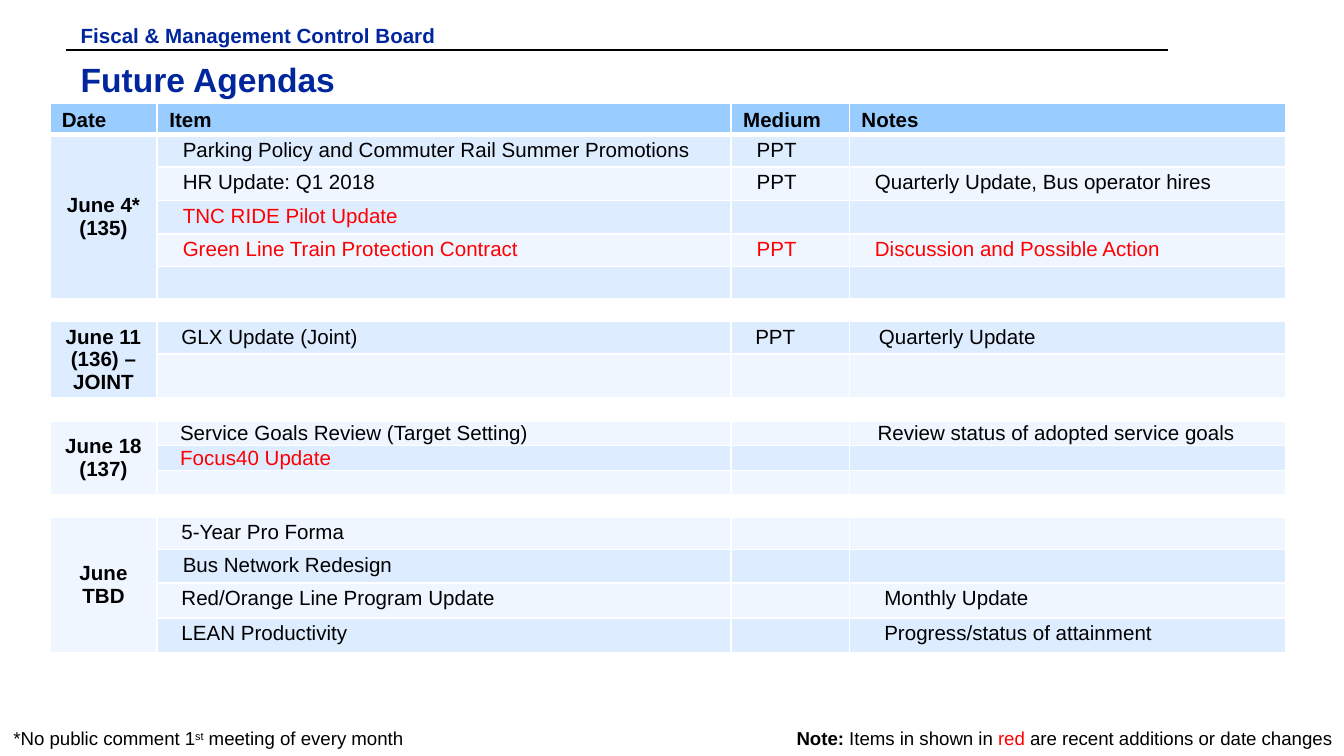
from lxml import etree
from pptx import Presentation
from pptx.dml.color import RGBColor
from pptx.enum.shapes import MSO_CONNECTOR
from pptx.enum.text import MSO_ANCHOR, PP_ALIGN
from pptx.oxml import parse_xml
from pptx.oxml.ns import nsdecls, qn
from pptx.util import Inches, Pt

TOP, MIDDLE = MSO_ANCHOR.TOP, MSO_ANCHOR.MIDDLE
LEFT, CENTER, RIGHT = PP_ALIGN.LEFT, PP_ALIGN.CENTER, PP_ALIGN.RIGHT
STRAIGHT = MSO_CONNECTOR.STRAIGHT
COLORS = {
    "navy": "00269E", "black": "000000", "red": "FF0000", "white": "FFFFFF",
    "header": "99CCFF", "dark": "DEECFF", "light": "EFF6FF",
}


def write(paragraph, text, size=11, color="black", bold=False, align=LEFT, raised=False):
    """Append formatted text to a paragraph, with a line break at each newline."""
    paragraph.alignment = align
    for index, line in enumerate(text.split("\n")):
        if index:
            paragraph.add_line_break()
        run = paragraph.add_run()
        run.text = line
        run.font.name = "Arial"
        run.font.size = Pt(size)
        run.font.bold = bold
        run.font.color.rgb = RGBColor.from_string(COLORS[color])
        if raised:
            run._r.get_or_add_rPr().set("baseline", "30000")


def style_cell(cell, fill=None, bottom=1, left=0.09, anchor=TOP, pad=0.03):
    """Set the fill, white borders, margins and anchor of a cell."""
    cell.margin_left, cell.margin_right = Inches(left), Inches(0.09)
    cell.margin_top, cell.margin_bottom = Inches(pad), Inches(pad * 2 / 3)
    cell.vertical_anchor = anchor
    properties = cell._tc.get_or_add_tcPr()
    for side, width in (("L", 1), ("R", 1), ("T", 1), ("B", bottom)):
        properties.append(parse_xml(
            f'<a:ln{side} {nsdecls("a")} w="{Pt(width)}"><a:solidFill>'
            f'<a:srgbClr val="{COLORS["white"]}"/></a:solidFill></a:ln{side}>'))
    if fill:
        cell.fill.solid()
        cell.fill.fore_color.rgb = RGBColor.from_string(COLORS[fill])
    else:
        cell.fill.background()


# Widescreen slide, 16:9
prs = Presentation()
prs.slide_width, prs.slide_height = Inches(10), Inches(10 * 9 / 16)
slide = prs.slides.add_slide(prs.slide_layouts[5])

# Heading and rule
rule = slide.shapes.add_connector(STRAIGHT, Inches(0.49), Inches(0.37), Inches(8.69), Inches(0.37))
rule.line.color.rgb = RGBColor.from_string(COLORS["black"])
rule.line.width = Pt(1)
etree.SubElement(rule._element.spPr, qn("a:effectLst"))

title = slide.shapes.title
title.left, title.top, title.width, title.height = Inches(0.51), Inches(0.4), Inches(8.36), Inches(0.48)
title.text_frame.vertical_anchor = TOP
title.text_frame.margin_left, title.text_frame.margin_top = Inches(0.09), Inches(0.04)
write(title.text_frame.paragraphs[0], "Future Agendas", size=18, color="navy", bold=True)

board = slide.shapes.add_textbox(Inches(0.51), Inches(0.13), Inches(3.41), Inches(0.19))
board.text_frame.word_wrap = True
board.text_frame.margin_left, board.text_frame.margin_top = Inches(0.09), Inches(0.04)
write(board.text_frame.paragraphs[0], "Fiscal & Management Control Board", color="navy", bold=True)

# Meetings: date paragraphs, first band, padding, then (row height, color, cells),
# each cell being its column, text and left inset
meetings = [
    (["June 4*", "(135)"], 0, 0.03, [
        (0.24, "black", [(1, "Parking Policy and Commuter Rail Summer Promotions", 0.19), (2, "PPT", 0.19)]),
        (0.25, "black", [(1, "HR Update: Q1 2018", 0.19), (2, "PPT", 0.19),
                         (3, "Quarterly Update, Bus operator hires", 0.19)]),
        (0.25, "red", [(1, "TNC RIDE Pilot Update", 0.19)]),
        (0.24, "red", [(1, "Green Line Train Protection Contract", 0.19), (2, "PPT", 0.19),
                       (3, "Discussion and Possible Action", 0.19)]),
        (0.24, "black", []),
    ]),
    (["June 11 (136) – JOINT"], 0, 0.03, [
        (0.24, "black", [(1, "GLX Update (Joint)", 0.18), (2, "PPT", 0.18), (3, "Quarterly Update", 0.22)]),
        (0.33, "black", []),
    ]),
    (["June 18", "(137)"], 1, 0, [
        (0.18, "black", [(1, "Service Goals Review (Target Setting)", 0.17),
                         (3, "Review status of adopted service goals", 0.21)]),
        (0.18, "red", [(1, "Focus40 Update", 0.17)]),
        (0.18, "black", []),
    ]),
    (["June\nTBD"], 1, 0.03, [
        (0.24, "black", [(1, "5-Year Pro Forma", 0.18)]),
        (0.25, "black", [(1, "Bus Network Redesign", 0.19)]),
        (0.26, "black", [(1, "Red/Orange Line Program Update", 0.18), (3, "Monthly Update", 0.26)]),
        (0.26, "black", [(1, "LEAN Productivity", 0.18), (3, "Progress/status of attainment", 0.26)]),
    ]),
]
HEADER_HEIGHT, GAP_HEIGHT = 0.23, 0.17
column_widths = [0.8, 4.27, 0.88, 3.25]
row_count = sum(len(items) for *_, items in meetings) + len(meetings)

# Agenda table
agenda = slide.shapes.add_table(
    row_count, 4, Inches(0.37), Inches(0.77), Inches(9.2), Inches(4.19)).table
for column, width in zip(agenda.columns, column_widths):
    column.width = Inches(width)

agenda.rows[0].height = Inches(HEADER_HEIGHT)
for column, heading in enumerate(["Date", "Item", "Medium", "Notes"]):
    cell = agenda.cell(0, column)
    style_cell(cell, "header", bottom=3, anchor=MIDDLE)
    write(cell.text_frame.paragraphs[0], heading, bold=True)

row = 1
for number, (date_lines, first_band, pad, items) in enumerate(meetings):
    # Unfilled row between meetings
    if number:
        agenda.rows[row].height = Inches(GAP_HEIGHT)
        for column in range(4):
            style_cell(agenda.cell(row, column), pad=0)
        row += 1

    # Merged date cell
    date = agenda.cell(row, 0)
    date.merge(agenda.cell(row + len(items) - 1, 0))
    style_cell(date, ("dark", "light")[first_band], anchor=MIDDLE, pad=0)
    for index, line in enumerate(date_lines):
        paragraph = date.text_frame.add_paragraph() if index else date.text_frame.paragraphs[0]
        write(paragraph, line, bold=True, align=CENTER)

    # Banded item rows
    for index, (height, color, entries) in enumerate(items):
        agenda.rows[row].height = Inches(height)
        band = ("dark", "light")[(first_band + index) % 2]
        texts = {column: (text, inset) for column, text, inset in entries}
        for column in range(1, 4):
            text, inset = texts.get(column, ("", 0.09))
            cell = agenda.cell(row, column)
            style_cell(cell, band, left=inset, pad=pad if text else 0, anchor=TOP if pad else MIDDLE)
            if text:
                write(cell.text_frame.paragraphs[0], text, color=color)
        row += 1

# Small type in empty cells keeps their rows at the set height
for cell in agenda.iter_cells():
    if not cell.text:
        end = etree.SubElement(cell.text_frame.paragraphs[0]._p, qn("a:endParaRPr"))
        end.set("sz", "800")

# Footnotes
comment = slide.shapes.add_textbox(Inches(0.01), Inches(5.37), Inches(4.16), Inches(0.26))
change = slide.shapes.add_textbox(Inches(5.8), Inches(5.37), Inches(4.2), Inches(0.26))
for footnote in (comment, change):
    frame = footnote.text_frame
    frame.word_wrap = footnote is comment
    frame.margin_left = frame.margin_right = Inches(0.09)
    frame.margin_top = frame.margin_bottom = Inches(0.04)

line = comment.text_frame.paragraphs[0]
write(line, "*No public comment 1", size=10)
write(line, "st", size=10, raised=True)
write(line, " meeting of every month", size=10)

line = change.text_frame.paragraphs[0]
write(line, "Note: ", size=10, bold=True, align=RIGHT)
write(line, "Items in shown in ", size=10, align=RIGHT)
write(line, "red", size=10, color="red", align=RIGHT)
write(line, " are recent additions or date changes", size=10, align=RIGHT)

prs.save("out.pptx")
